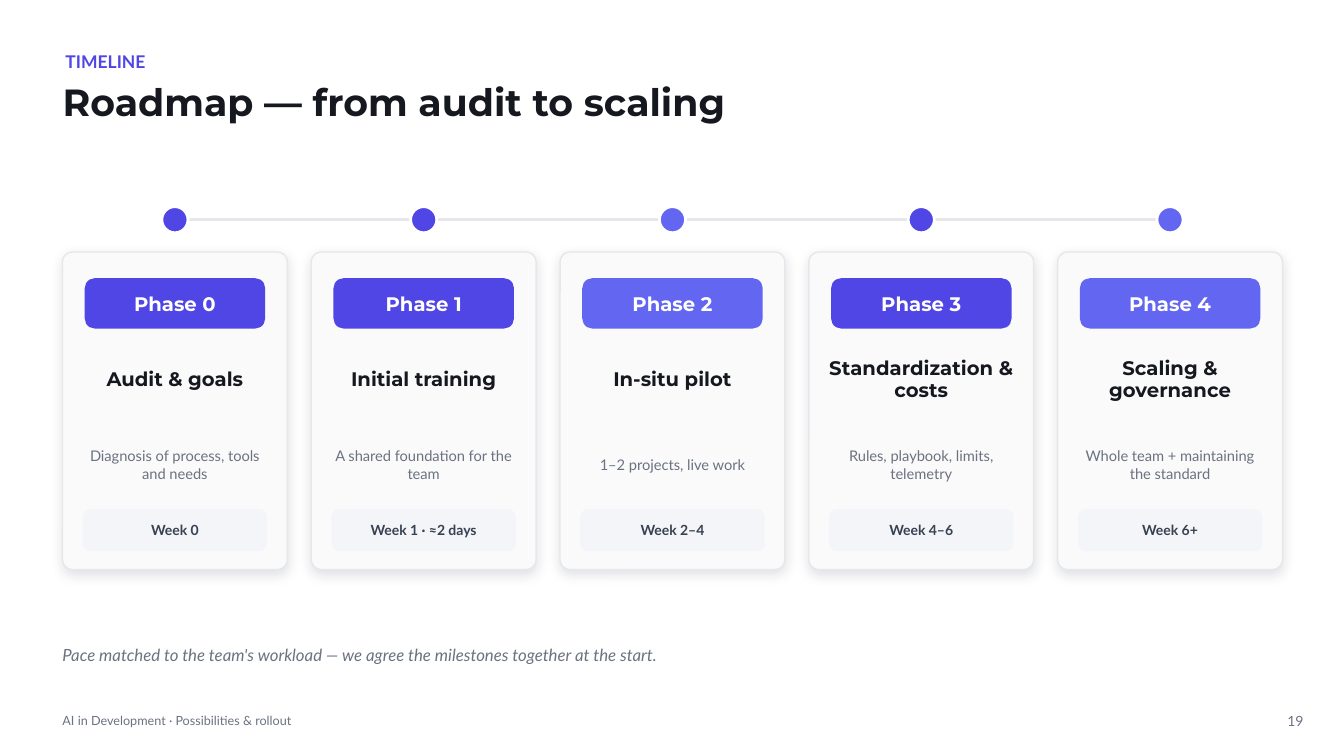
from dataclasses import dataclass

from lxml import etree
from pptx import Presentation
from pptx import util as u
from pptx.dml.color import RGBColor
from pptx.enum import shapes, text
from pptx.oxml.ns import qn


@dataclass(frozen=True)
class Theme:
    heading: str = "Montserrat"
    body: str = "Lato"
    indigo: str = "4F46E5"
    violet: str = "6366F1"
    ink: str = "16181F"
    slate: str = "374151"
    muted: str = "6B7280"
    rule: str = "E5E7EB"
    card: str = "FAFAFB"
    chip: str = "F4F5F8"
    white: str = "FFFFFF"
    shade: str = "0F172A"
    title_size: float = 27
    kicker_size: float = 12.5
    card_size: float = 14
    detail_size: float = 10.5
    note_size: float = 12
    small_size: float = 10
    footer_size: float = 9


THEME = Theme()
PHASES = [
    ("Phase 0", "Audit & goals", "Diagnosis of process, tools and needs", "Week 0", THEME.indigo),
    ("Phase 1", "Initial training", "A shared foundation for the team", "Week 1 · ≈2 days", THEME.indigo),
    ("Phase 2", "In-situ pilot", "1–2 projects, live work", "Week 2–4", THEME.violet),
    ("Phase 3", "Standardization & costs", "Rules, playbook, limits, telemetry", "Week 4–6", THEME.indigo),
    ("Phase 4", "Scaling & governance", "Whole team + maintaining the standard", "Week 6+", THEME.violet),
]


def inches(*lengths):
    return [u.Inches(length) for length in lengths]


def write(holder, content, *, size, color, font=THEME.body, bold=False, italic=False,
          align=text.PP_ALIGN.LEFT, anchor=text.MSO_ANCHOR.MIDDLE, spacing=None):
    frame = holder.text_frame
    frame.margin_left = frame.margin_top = frame.margin_right = frame.margin_bottom = 0
    frame.auto_size = text.MSO_AUTO_SIZE.NONE
    frame.word_wrap = True
    frame.vertical_anchor = anchor
    paragraph = frame.paragraphs[0]
    paragraph.alignment = align
    paragraph.line_spacing = spacing
    run = paragraph.add_run()
    run.text = content
    run.font.name = font
    run.font.size = u.Pt(size)
    run.font.bold = bold
    run.font.italic = italic
    run.font.color.rgb = RGBColor.from_string(color)


def add_label(slide, box, content, **style):
    write(slide.shapes.add_textbox(*inches(*box)), content, **style)


def add_panel(slide, kind, box, fill, radius=None, line=None, line_width=1):
    panel = slide.shapes.add_shape(kind, *inches(*box))
    panel.shadow.inherit = False
    panel.fill.solid()
    panel.fill.fore_color.rgb = RGBColor.from_string(fill)
    if radius is not None:
        panel.adjustments[0] = radius
    if line:
        panel.line.color.rgb = RGBColor.from_string(line)
        panel.line.width = u.Pt(line_width)
    else:
        panel.line.fill.background()
    return panel


def cast_shadow(panel):
    effects = panel._element.spPr.find(qn("a:effectLst"))
    outer = etree.SubElement(effects, qn("a:outerShdw"), blurRad=str(u.Pt(9)),
                             dist=str(u.Pt(3)), dir="5400000", algn="bl", rotWithShape="0")
    tint = etree.SubElement(outer, qn("a:srgbClr"), val=THEME.shade)
    etree.SubElement(tint, qn("a:alpha"), val="13000")


def add_header(slide, left, top, width):
    add_label(slide, (left + 0.03, top, width - 0.3, 0.3), "TIMELINE",
              size=THEME.kicker_size, color=THEME.indigo, bold=True)
    title = slide.shapes.title
    title.left, title.top, title.width, title.height = inches(left, top + 0.32, width, 0.85)
    write(title, "Roadmap — from audit to scaling", size=THEME.title_size, color=THEME.ink,
          font=THEME.heading, bold=True, anchor=text.MSO_ANCHOR.TOP)


def add_card(slide, left, top, width, height, phase):
    name, goal, detail, weeks, accent = phase
    rounded = shapes.MSO_SHAPE.ROUNDED_RECTANGLE
    center = text.PP_ALIGN.CENTER

    def inset(margin, offset, depth):
        return left + margin, top + offset, width - 2 * margin, depth

    cast_shadow(add_panel(slide, rounded, (left, top, width, height), THEME.card,
                          radius=0.045, line=THEME.rule))
    badge = add_panel(slide, rounded, inset(0.22, 0.26, 0.5), accent, radius=0.2)
    write(badge, name, size=THEME.card_size, color=THEME.white, font=THEME.heading,
          bold=True, align=center)
    add_label(slide, inset(0.18, 0.92, 0.7), goal, size=THEME.card_size, color=THEME.ink,
              font=THEME.heading, bold=True, align=center, spacing=0.92)
    add_label(slide, inset(0.2, 1.68, 0.85), detail, size=THEME.detail_size,
              color=THEME.muted, align=center, spacing=1.02)
    week_chip = add_panel(slide, rounded, inset(0.2, height - 0.6, 0.42), THEME.chip, radius=0.19)
    write(week_chip, weeks, size=THEME.small_size, color=THEME.slate, bold=True, align=center)


def add_roadmap(slide, left, top, width, height):
    card_width, dot, card_offset = 2.23, 0.26, 0.45
    pitch = (width - card_width) / (len(PHASES) - 1)
    axis = top + dot / 2
    first = left + card_width / 2
    track = slide.shapes.add_connector(
        shapes.MSO_CONNECTOR.STRAIGHT, *inches(first, axis, left + width - card_width / 2, axis))
    track.line.color.rgb = RGBColor.from_string(THEME.rule)
    track.line.width = u.Pt(2)
    etree.SubElement(track._element.spPr, qn("a:effectLst"))
    for index, phase in enumerate(PHASES):
        shift = index * pitch
        add_panel(slide, shapes.MSO_SHAPE.OVAL, (first + shift - dot / 2, top, dot, dot),
                  phase[-1], line=THEME.white, line_width=2)
        add_card(slide, left + shift, top + card_offset, card_width, height - card_offset, phase)


def add_footer(slide, left, top, width):
    add_label(slide, (left, top, 6, 0.3), "AI in Development · Possibilities & rollout",
              size=THEME.footer_size, color=THEME.muted)
    add_label(slide, (left + width - 0.7, top, 0.7, 0.3), "19",
              size=THEME.small_size, color=THEME.muted, align=text.PP_ALIGN.RIGHT)


def main():
    deck = Presentation()
    deck.slide_width, deck.slide_height = inches(13.33, 7.5)
    slide = deck.slides.add_slide(deck.slide_layouts.get_by_name("Title Only"))
    margin = 0.62
    add_header(slide, margin, 0.46, 12.1)
    add_roadmap(slide, margin, 2.05, 12.1, 3.6)
    add_label(slide, (margin, 6.35, 12, 0.3),
              "Pace matched to the team's workload — we agree the milestones together at the start.",
              size=THEME.note_size, color=THEME.muted, italic=True)
    add_footer(slide, margin, 7, 12.31)
    deck.save("out.pptx")


if __name__ == "__main__":
    main()
